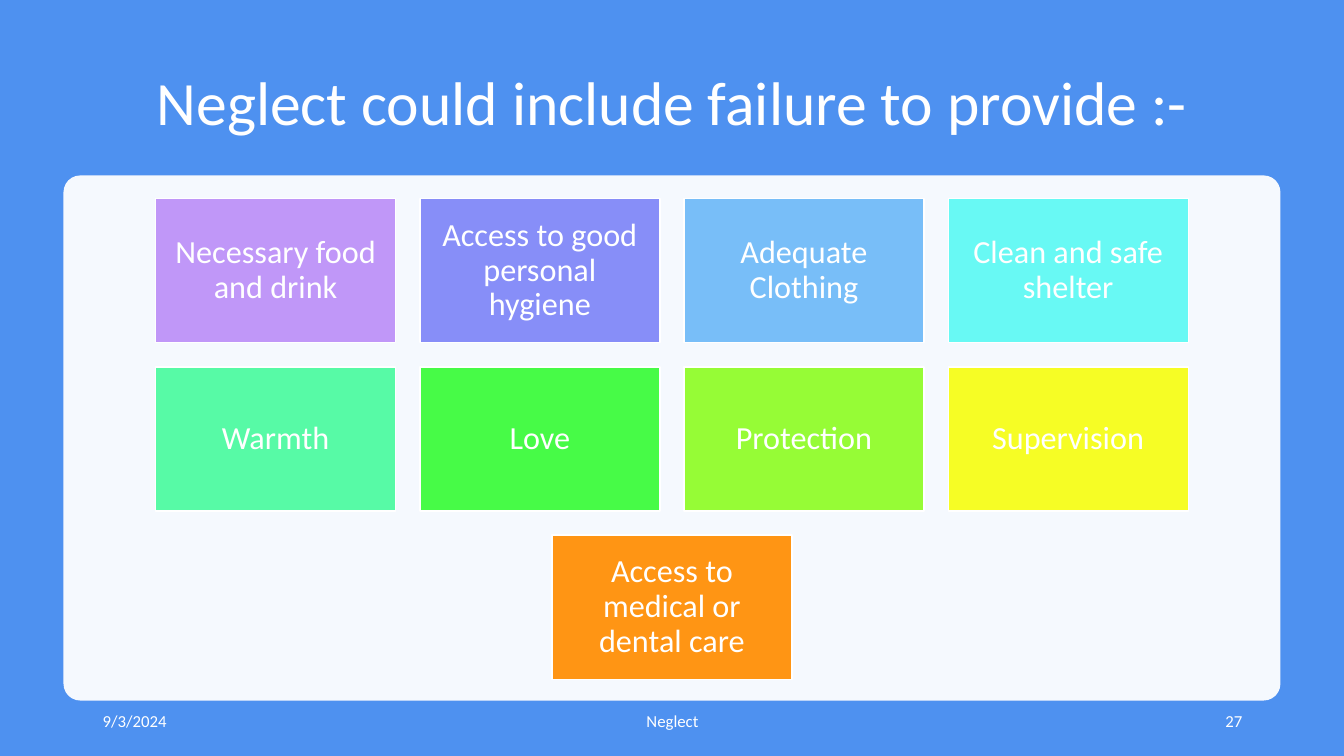
"""Build the slide listing what neglect could fail to provide."""
from lxml import etree
from pptx import Presentation
from pptx import util as u
from pptx.dml.color import RGBColor
from pptx.enum import shapes, text

WHITE = "FFFFFF"
LEFT, CENTER, RIGHT = text.PP_ALIGN.LEFT, text.PP_ALIGN.CENTER, text.PP_ALIGN.RIGHT


def paint(fill, color):
    fill.solid()
    fill.fore_color.rgb = RGBColor.from_string(color)


def write(sp, words, size, align, spacing=1.0):
    tf = sp.text_frame
    tf.word_wrap = True
    tf.vertical_anchor = text.MSO_ANCHOR.MIDDLE
    tf.text = words
    p = tf.paragraphs[0]
    p.alignment = align
    p.line_spacing = spacing
    font = p.runs[0].font
    font.name = "Calibri"
    font.size = u.Pt(size)
    paint(font.fill, WHITE)


prs = Presentation()
prs.slide_width, prs.slide_height = u.Inches(13.33), u.Inches(7.5)
s = prs.slides.add_slide(prs.slide_layouts[6])
paint(s.background.fill, "4E91F0")

title = s.shapes.add_textbox(u.Inches(0.92), u.Inches(0.5), u.Inches(11.5), u.Inches(1.1))
write(title, "Neglect could include failure to provide :-", 44, CENTER, 0.9)

panel = s.shapes.add_shape(shapes.MSO_SHAPE.ROUNDED_RECTANGLE,
                           u.Inches(0.63), u.Inches(1.74), u.Inches(12.07), u.Inches(5.21))
panel.adjustments[0] = 0.032
panel.shadow.inherit = False
panel.line.fill.background()
paint(panel.fill, WHITE)
color = panel.fill._xPr.solidFill[0]
etree.SubElement(color, color.tag.replace("srgbClr", "alpha"), val="95000")

footers = [
    ("9/3/2024", 0.92, 3, LEFT),
    ("Neglect", 4.42, 4.5, CENTER),
    ("27", 9.42, 3, RIGHT),
]
for words, left, width, align in footers:
    sp = s.shapes.add_textbox(u.Inches(left), u.Inches(6.95), u.Inches(width), u.Inches(0.4))
    write(sp, words, 12, align)

rows = [
    [("Necessary food and drink", "C097F8"), ("Access to good personal hygiene", "878EF8"),
     ("Adequate Clothing", "78BEF8"), ("Clean and safe shelter", "68F9F4")],
    [("Warmth", "57FAA6"), ("Love", "47FB47"),
     ("Protection", "96FC36"), ("Supervision", "F6FD25")],
    [("Access to medical or dental care", "FF9514")],
]
CARD_W, CARD_H, GAP, TOP = 2.38, 1.43, 0.24, 1.97
for i, row in enumerate(rows):
    row_width = len(row) * (CARD_W + GAP) - GAP
    start = (13.33 - row_width) / 2
    for j, (words, color) in enumerate(row):
        sp = s.shapes.add_shape(shapes.MSO_SHAPE.RECTANGLE,
                                u.Inches(start + j * (CARD_W + GAP)),
                                u.Inches(TOP + i * (CARD_H + GAP)),
                                u.Inches(CARD_W), u.Inches(CARD_H))
        sp.shadow.inherit = False
        paint(sp.fill, color)
        paint(sp.line.fill, WHITE)
        sp.line.width = u.Pt(1)
        tf = sp.text_frame
        tf.margin_left = tf.margin_right = tf.margin_top = tf.margin_bottom = u.Inches(0.1)
        write(sp, words, 23, CENTER, 0.9)

prs.save("out.pptx")
